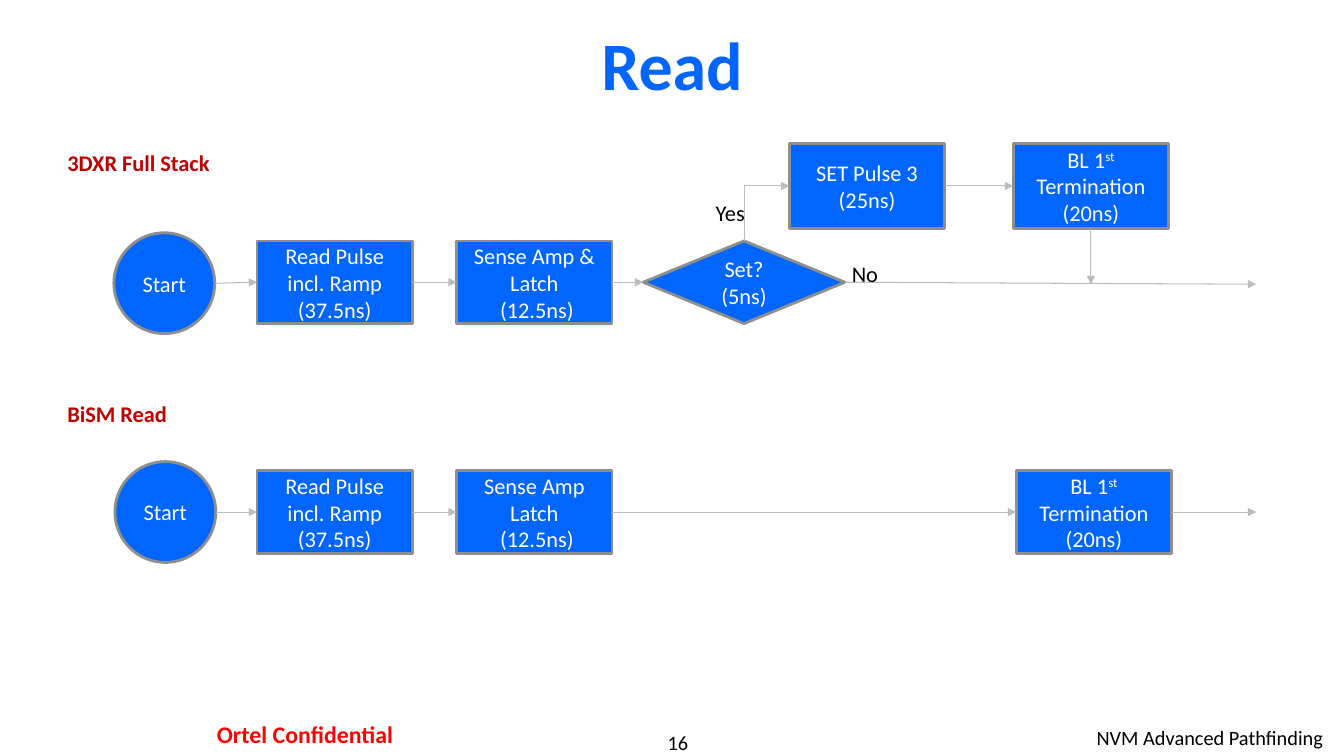
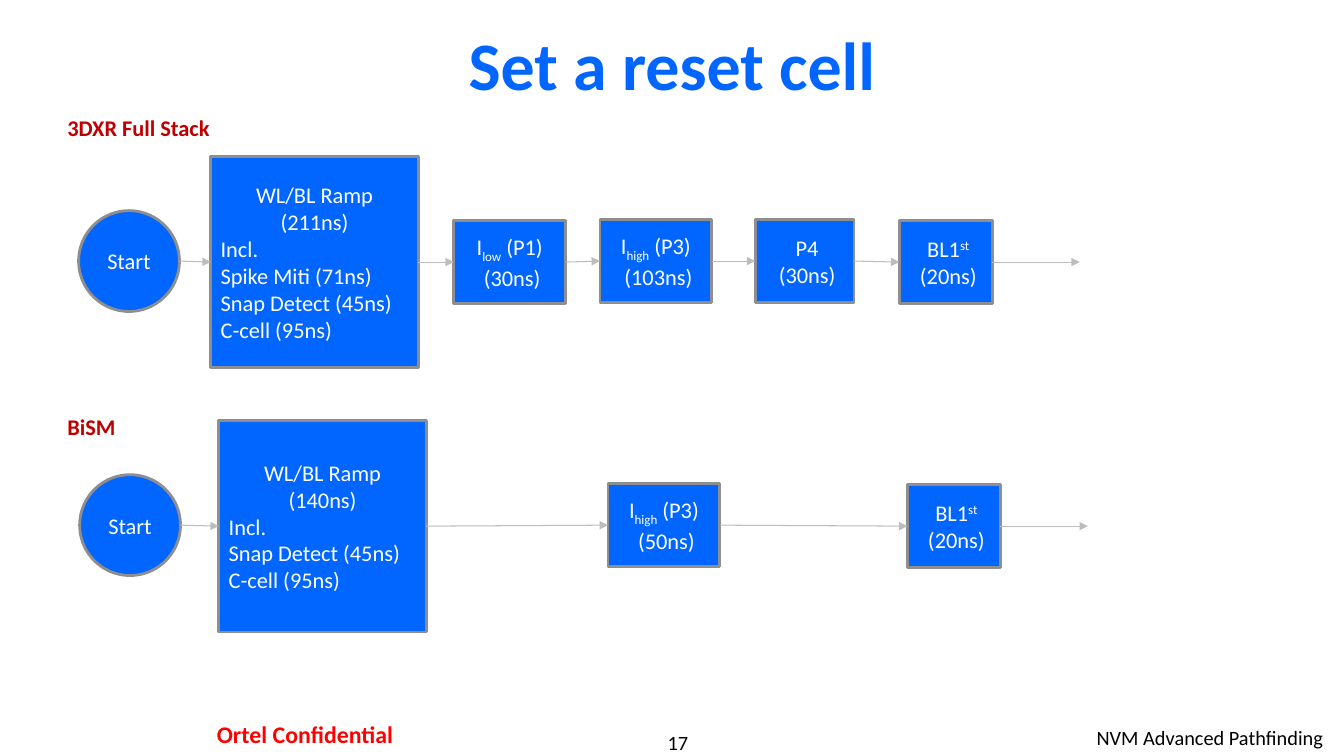
from dataclasses import dataclass
from itertools import pairwise

from lxml import etree
from pptx import Presentation
from pptx.dml.color import RGBColor
from pptx.enum.shapes import MSO_CONNECTOR, MSO_SHAPE
from pptx.enum.text import MSO_ANCHOR, MSO_AUTO_SIZE, PP_ALIGN
from pptx.oxml.ns import qn
from pptx.util import Emu, Pt

RECTANGLE, DIAMOND, OVAL = MSO_SHAPE.RECTANGLE, MSO_SHAPE.DIAMOND, MSO_SHAPE.OVAL
STRAIGHT, ELBOW = MSO_CONNECTOR.STRAIGHT, MSO_CONNECTOR.ELBOW
LEFT, CENTER, RIGHT = PP_ALIGN.LEFT, PP_ALIGN.CENTER, PP_ALIGN.RIGHT
TOP, MIDDLE = MSO_ANCHOR.TOP, MSO_ANCHOR.MIDDLE
FIXED_SIZE = MSO_AUTO_SIZE.NONE

TITLE_ONLY_LAYOUT = 5
EMU_PER_PX = 9144
TOP_SITE, LEFT_SITE, BOTTOM_SITE, RIGHT_SITE = range(4)
STEP_HEIGHT = 82
START_SIZE = 100

ORDINAL = ("st", 30)
READ_PULSE = ["Read Pulse incl. Ramp", "(37.5ns)"]
TERMINATION = [["BL 1", ORDINAL, " Termination (20ns)"]]
SHORT_TERMINATION = [[" BL1", ORDINAL], " (20ns)"]


@dataclass(frozen=True)
class Theme:
    font: str = "Calibri"
    blue: RGBColor = RGBColor(0x00, 0x66, 0xFF)
    heading_red: RGBColor = RGBColor(0xC0, 0x00, 0x00)
    notice_red: RGBColor = RGBColor(0xFF, 0x00, 0x00)
    border: RGBColor = RGBColor(0x8E, 0x8E, 0x8E)
    arrow: RGBColor = RGBColor(0xBC, 0xBC, 0xBC)
    white: RGBColor = RGBColor(0xFF, 0xFF, 0xFF)
    black: RGBColor = RGBColor(0x00, 0x00, 0x00)
    title_size: float = 48.5
    body_size: float = 16
    footer_size: float = 14.5
    notice_size: float = 17
    border_width: float = 2
    arrow_width: float = 0.75


def px(length):
    return Emu(length * EMU_PER_PX)


def current_pulse(level, pulse, duration):
    return [["I", (level, -25), f" ({pulse})"], f" ({duration})"]


def ramp(duration, *parts):
    return ["WL/BL Ramp", f"({duration})", "Incl.", *parts]


class Deck:
    def __init__(self, theme):
        self.theme = theme
        self.presentation = Presentation()
        self.presentation.slide_width = px(1333)
        self.presentation.slide_height = px(750)
        self.slide = None

    def new_slide(self, title, number):
        theme = self.theme
        layout = self.presentation.slide_layouts[TITLE_ONLY_LAYOUT]
        self.slide = self.presentation.slides.add_slide(layout)
        self.label(556, 724, 233, 24, str(number), theme.footer_size,
                   align=CENTER, margins=(0, 0))
        self.label(883, 715, 439, 35, "NVM Advanced Pathfinding",
                   theme.footer_size, align=RIGHT)
        self.label(155, 708, 295, 41, "Ortel Confidential", theme.notice_size,
                   theme.notice_red, bold=True, align=CENTER, margins=(12, 6))
        shape = self.slide.shapes.title
        shape.left, shape.top, shape.width, shape.height = map(px, (100, 17, 1133, 92))
        self.fill_text(shape, [title], theme.title_size, theme.blue, bold=True,
                       align=CENTER, anchor=MIDDLE)

    def fill_text(self, shape, paragraphs, size, color, bold=False, align=LEFT,
                  anchor=TOP, margins=(10, 5), wrap=True, centered_count=None):
        """Fill a shape; paragraphs past centered_count are left-aligned.

        A paragraph is a string or a list of strings and (text, baseline) pairs.
        """
        frame = shape.text_frame
        frame.auto_size = FIXED_SIZE
        frame.word_wrap = wrap
        frame.vertical_anchor = anchor
        frame.margin_left = frame.margin_right = px(margins[0])
        frame.margin_top = frame.margin_bottom = px(margins[1])
        for index, content in enumerate(paragraphs):
            paragraph = frame.add_paragraph() if index else frame.paragraphs[0]
            is_list = centered_count is not None and index >= centered_count
            paragraph.alignment = LEFT if is_list else align
            for part in [content] if isinstance(content, str) else content:
                text, baseline = (part, 0) if isinstance(part, str) else part
                run = paragraph.add_run()
                run.text = text
                run.font.name = self.theme.font
                run.font.size = Pt(size)
                run.font.bold = bold
                run.font.color.rgb = color
                if baseline:
                    run.font._element.set("baseline", str(baseline * 1000))

    def label(self, left, top, width, height, text, size, color=None, **style):
        shape = self.slide.shapes.add_textbox(*map(px, (left, top, width, height)))
        self.fill_text(shape, [text], size, color or self.theme.black, **style)

    def heading(self, top, width, text):
        self.label(57, top, width, 37, text, self.theme.body_size,
                   self.theme.heading_red, bold=True, wrap=False)

    def branch_label(self, left, top, width, text):
        self.label(left, top, width, 37, text, self.theme.body_size, wrap=False)

    def step(self, left, top, width, paragraphs, height=STEP_HEIGHT,
             kind=RECTANGLE, centered_count=None):
        theme = self.theme
        shape = self.slide.shapes.add_shape(kind, *map(px, (left, top, width, height)))
        shape.shadow.inherit = False
        shape.fill.solid()
        shape.fill.fore_color.rgb = theme.blue
        shape.line.color.rgb = theme.border
        shape.line.width = Pt(theme.border_width)
        self.fill_text(shape, paragraphs, theme.body_size, theme.white, align=CENTER,
                       anchor=MIDDLE, centered_count=centered_count)
        return shape

    def start(self, left, top):
        return self.step(left, top, START_SIZE, ["Start"], START_SIZE, OVAL)

    def connector(self, begin, end, kind=STRAIGHT, head="tailEnd"):
        connector = self.slide.shapes.add_connector(kind, *begin, *end)
        connector.line.color.rgb = self.theme.arrow
        connector.line.width = Pt(self.theme.arrow_width)
        properties = connector._element.spPr
        line = properties.find(qn("a:ln"))
        etree.SubElement(line, qn(f"a:{head}"), type="triangle")
        etree.SubElement(properties, qn("a:effectLst"))
        return connector

    def flow(self, *shapes):
        """Join neighbouring shapes from right side to left side."""
        for source, target in pairwise(shapes):
            connector = self.connector(right_middle(source),
                                       (target.left, target.top + target.height // 2))
            if source.auto_shape_type != OVAL:
                connector.begin_connect(source, RIGHT_SITE)
            connector.end_connect(target, LEFT_SITE)

    def exit_right(self, source, x, y):
        connector = self.connector(right_middle(source), (px(x), px(y)))
        connector.begin_connect(source, RIGHT_SITE)

    def exit_down(self, source, y):
        center = source.left + source.width // 2
        connector = self.connector((center, source.top + source.height),
                                   (center, px(y)))
        connector.begin_connect(source, BOTTOM_SITE)

    def branch_up(self, source, target):
        """Bend from the top of source to the left side of target."""
        connector = self.connector(
            (target.left, target.top + target.height // 2),
            (source.left + source.width // 2, source.top), ELBOW, "headEnd")
        connector._element.spPr.find(qn("a:prstGeom")).set("prst", "bentConnector2")
        connector.begin_connect(target, LEFT_SITE)
        connector.end_connect(source, TOP_SITE)


def right_middle(shape):
    return shape.left + shape.width, shape.top + shape.height // 2


def build_read(deck):
    deck.new_slide("Read", 16)
    step_width = 154

    deck.heading(143, 162, "3DXR Full Stack")
    decision = deck.step(638, 239, 200, ["Set? (5ns)"], kind=DIAMOND)
    deck.flow(
        deck.start(113, 231),
        deck.step(255, 239, step_width, READ_PULSE),
        deck.step(453, 239, step_width, ["Sense Amp &", "Latch", " (12.5ns)"]),
        decision,
    )
    set_pulse = deck.step(783, 142, step_width, ["SET Pulse 3 (25ns)"], 85)
    termination = deck.step(1005, 142, step_width, TERMINATION, 85)
    deck.flow(set_pulse, termination)
    deck.branch_up(decision, set_pulse)
    deck.exit_right(decision, 1246, 282)
    deck.exit_down(termination, 282)
    deck.branch_label(700, 193, 49, "Yes")
    deck.branch_label(835, 253, 47, "No")

    deck.heading(392, 120, "BiSM Read")
    termination = deck.step(1008, 467, step_width, TERMINATION)
    deck.flow(
        deck.start(114, 458),
        deck.step(255, 467, step_width, READ_PULSE),
        deck.step(453, 467, step_width, ["Sense Amp Latch", " (12.5ns)"]),
        termination,
    )
    deck.exit_right(termination, 1246, 508)


def build_set(deck):
    deck.new_slide("Set a reset cell", 17)
    ramp_width, ramp_height = 206, 210
    pulse_width, termination_width = 111, 92
    shared_parts = ["Snap Detect (45ns)", "C-cell (95ns)"]

    deck.heading(108, 162, "3DXR Full Stack")
    termination = deck.step(892, 219, termination_width, SHORT_TERMINATION)
    deck.flow(
        deck.start(78, 209),
        deck.step(209, 155, ramp_width,
                  ramp("211ns", "Spike Miti (71ns)", *shared_parts),
                  ramp_height, centered_count=2),
        deck.step(450, 219, pulse_width, current_pulse("low", "P1", "30ns")),
        deck.step(595, 218, pulse_width, current_pulse("high", "P3", "103ns")),
        deck.step(749, 218, 98, [" P4", " (30ns)"]),
        termination,
    )
    deck.exit_right(termination, 1071, 260)

    deck.heading(405, 69, "BiSM")
    termination = deck.step(900, 481, termination_width, SHORT_TERMINATION)
    deck.flow(
        deck.start(79, 471),
        deck.step(217, 417, ramp_width, ramp("140ns", *shared_parts),
                  ramp_height, centered_count=2),
        deck.step(603, 480, pulse_width, current_pulse("high", "P3", "50ns")),
        termination,
    )
    deck.exit_right(termination, 1079, 522)


def main():
    deck = Deck(Theme())
    build_read(deck)
    build_set(deck)
    deck.presentation.save("out.pptx")


if __name__ == "__main__":
    main()
